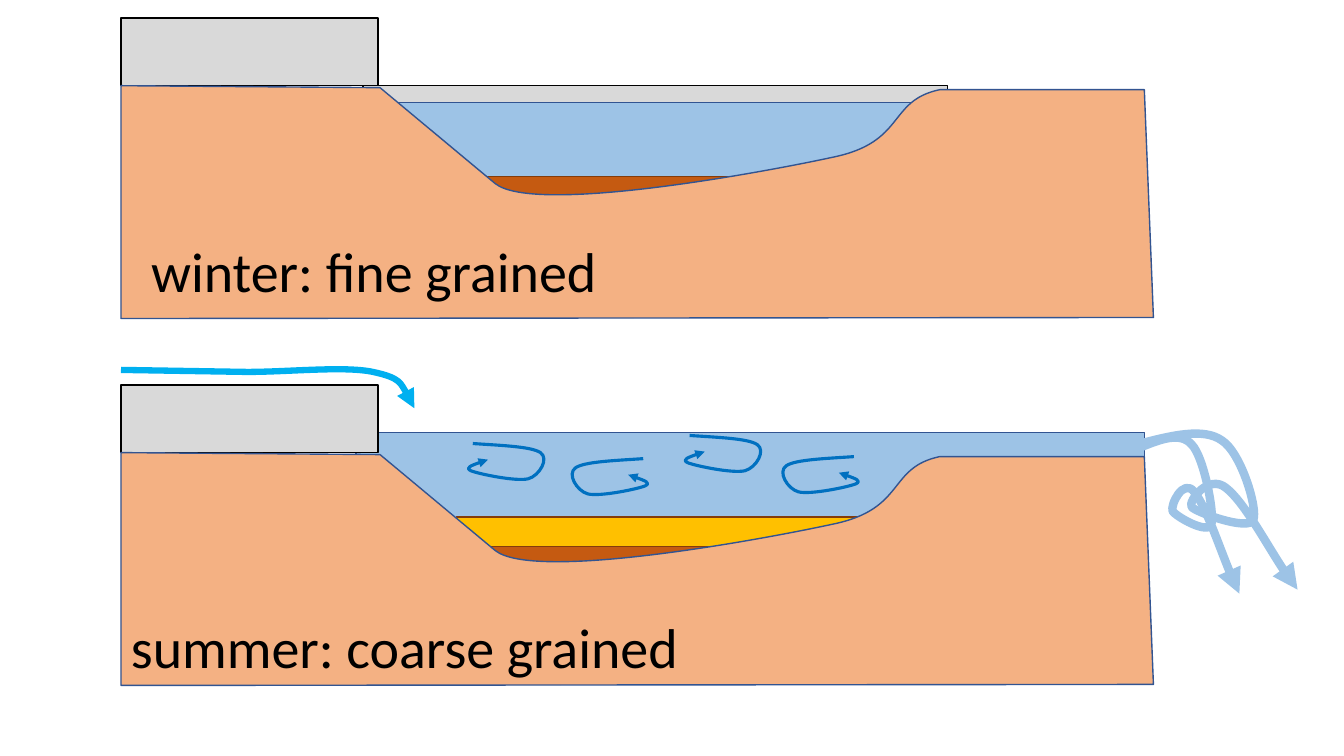
from lxml import etree
from pptx import Presentation
from pptx import util as u
from pptx.dml.color import RGBColor
from pptx.enum import shapes
from pptx.oxml import ns

BLACK = RGBColor(0x00, 0x00, 0x00)
ICE = RGBColor(0xD9, 0xD9, 0xD9)
WATER = RGBColor(0x9D, 0xC3, 0xE6)
EDGE = RGBColor(0x32, 0x54, 0x91)
MUD = RGBColor(0xC5, 0x5A, 0x11)
SAND = RGBColor(0xFF, 0xC0, 0x00)
BROWN = RGBColor(0x84, 0x3C, 0x0B)
GROUND = RGBColor(0xF4, 0xB1, 0x83)
STREAM = RGBColor(0x00, 0xB0, 0xF0)
SWIRL = RGBColor(0x00, 0x70, 0xC0)

# Steps from a start point: two numbers make a line, six make a curve
BASIN = [(0, 2.31), (10.24, 2.3), (10.15, 0.04), (8.12, 0.04),
         (7.6, 0.15, 7.79, 0.56, 7.06, 0.71),
         (6.32, 0.87, 4.09, 1.28, 3.71, 0.97), (2.57, 0.02)]
MELT = [(1.25, 0.02), (1.67, 0.02, 2.22, -0.04, 2.5, 0.02),
        (2.78, 0.08, 2.84, 0.23, 2.91, 0.38)]
SPILL = [(0.31, -0.08, 0.63, -0.16, 0.81, -0.03),
         (1, 0.09, 1.17, 0.65, 1.12, 0.76),
         (1.07, 0.87, 0.55, 0.68, 0.51, 0.63),
         (0.47, 0.57, 0.68, 0.3, 0.85, 0.44),
         (1.03, 0.58, 1.38, 1.23, 1.56, 1.45)]
EDDY = [(0.29, 0.02, 0.58, 0.03, 0.67, 0.09),
        (0.76, 0.15, 0.66, 0.32, 0.55, 0.35),
        (0.43, 0.38, 0.05, 0.3, -0.02, 0.27),
        (-0.08, 0.24, 0.03, 0.2, 0.15, 0.16)]


class Sketch:
    font = "Calibri"
    size = u.Pt(40)

    def __init__(self, slide):
        self.slide = slide

    def paint(self, shape, fill, line, width):
        shape.shadow.inherit = False
        if fill is None:
            shape.fill.background()
        else:
            shape.fill.solid()
            shape.fill.fore_color.rgb = fill
        shape.line.color.rgb = line
        shape.line.width = u.Pt(width)

    def block(self, left, top, width, height, fill, line):
        box = self.slide.shapes.add_shape(
            shapes.MSO_SHAPE.RECTANGLE,
            *map(u.Inches, (left, top, width, height)))
        self.paint(box, fill, line, 1)

    def curve(self, left, top, steps, line, width, fill=None, stretch=1, home=None):
        """Draw steps from (left, top); without a fill it ends in an arrow."""
        spots = [(u.Inches(left + stretch * step[i]), u.Inches(top + step[i + 1]))
                 for step in steps for i in range(0, len(step), 2)]
        pen = (home or self.slide).shapes.build_freeform(u.Inches(left), u.Inches(top))
        pen.add_line_segments(spots, close=fill is not None)
        shape = pen.convert_to_shape()
        self.paint(shape, fill, line, width)
        # Gather each three points of a curve in one Bézier segment
        props = shape._element.spPr
        legs = iter(list(props.iter(ns.qn("a:lnTo"))))
        for step in steps:
            leg = next(legs)
            if len(step) == 6:
                leg.tag = ns.qn("a:cubicBezTo")
                for _ in range(2):
                    extra = next(legs)
                    leg.append(extra[0])
                    extra.getparent().remove(extra)
        if fill is None:
            etree.SubElement(props.find(ns.qn("a:ln")), ns.qn("a:tailEnd"),
                             type="triangle")

    def label(self, left, top, words):
        frame = self.slide.shapes.add_textbox(
            *map(u.Inches, (left, top, 7.22, 0.77))).text_frame
        frame.word_wrap = True
        frame.text = words
        font = frame.paragraphs[0].runs[0].font
        font.name, font.size, font.color.rgb = self.font, self.size, BLACK

    def ice(self, top):
        self.block(1.2, top, 2.55, 0.67, ICE, BLACK)

    def ground(self, top):
        self.curve(1.2, top, BASIN, EDGE, 1, fill=GROUND)


def main():
    deck = Presentation()
    deck.slide_width, deck.slide_height = u.Inches(13.33), u.Inches(7.5)
    slide = deck.slides.add_slide(deck.slide_layouts[6])
    art = Sketch(slide)

    # Winter: frozen lake
    art.block(3.6, 0.85, 5.8, 0.17, ICE, BLACK)
    art.block(3.6, 1.02, 5.64, 1.56, WATER, EDGE)
    art.ice(0.18)
    art.block(4.65, 1.75, 3.77, 0.27, MUD, BROWN)
    art.ground(0.85)
    art.label(1.4, 2.3, "winter: fine grained")

    # Summer: open lake with inflow and spill
    art.block(3.53, 4.29, 7.82, 1.77, WATER, EDGE)
    art.ice(3.82)
    falls = slide.shapes.add_group_shape()
    for top, stretch in ((4.4, 1), (4.44, 0.63)):
        art.curve(11.31, top, SPILL, WATER, 6, stretch=stretch, home=falls)
    art.curve(1.2, 3.67, MELT, STREAM, 4.5)
    art.block(4.81, 5.42, 3.77, 0.27, MUD, BROWN)
    art.block(4.53, 5.13, 4.09, 0.29, SAND, BROWN)
    art.ground(4.49)
    art.label(1.2, 6.03, "summer: coarse grained")

    # Eddies, every other one mirrored
    for left, top, side in ((4.69, 4.4, 1), (6.38, 4.55, -1),
                            (6.84, 4.32, 1), (8.47, 4.53, -1)):
        art.curve(left, top, EDDY, SWIRL, 2.25, stretch=side)

    deck.save("out.pptx")


if __name__ == "__main__":
    main()
